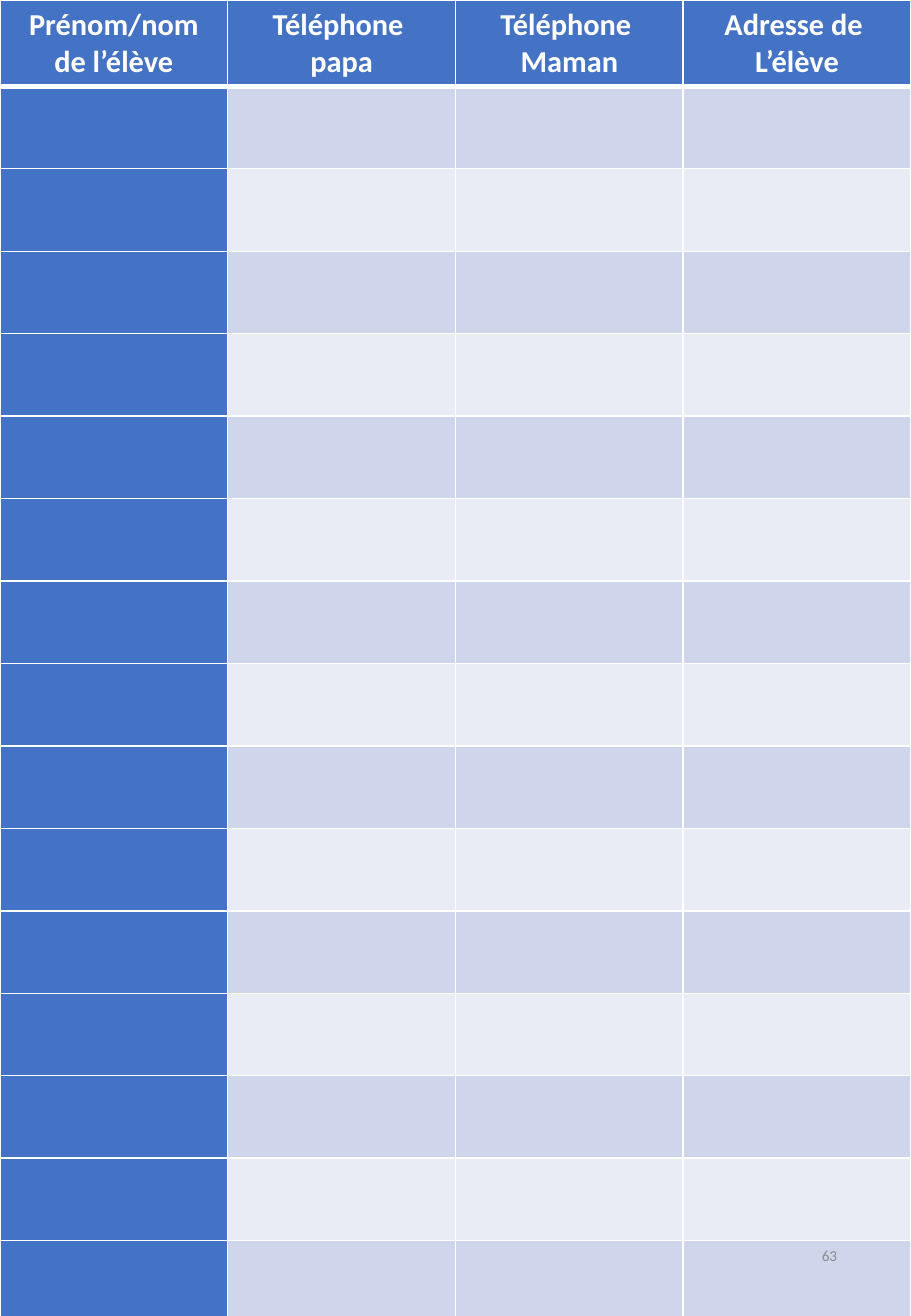
import lxml.etree
import pptx
import pptx.dml.color
import pptx.enum.text
import pptx.oxml.ns
import pptx.util

Pt = pptx.util.Pt
RGBColor = pptx.dml.color.RGBColor
ALIGN = pptx.enum.text.PP_ALIGN

WHITE = RGBColor(0xFF, 0xFF, 0xFF)
BLUE = RGBColor(0x44, 0x72, 0xC4)
BAND_DARK = RGBColor(0xCF, 0xD5, 0xEA)
BAND_LIGHT = RGBColor(0xE9, 0xEB, 0xF5)
GREY = RGBColor(0x8C, 0x8C, 0x8C)

PAGE_WIDTH, PAGE_HEIGHT = Pt(540), Pt(780)
ROW_HEIGHT = Pt(48.87)
ROW_COUNT = 16
HEADINGS = [
    "Prénom/nom de l’élève",
    "Téléphone \npapa",
    "Téléphone \nMaman",
    "Adresse de \nL’élève",
]


def format_text(frame, size, color, align, bold=False):
    """Apply one font and alignment to every paragraph of a text frame."""
    for para in frame.paragraphs:
        para.alignment = align
        for span in para.runs:
            span.font.name = "Calibri"
            span.font.size = Pt(size)
            span.font.bold = bold
            span.font.color.rgb = color


def add_borders(cell, top, bottom):
    """Draw white borders around a cell, with the given top and bottom widths."""
    qn = pptx.oxml.ns.qn
    properties = cell._tc.get_or_add_tcPr()
    for side, width in (("L", 1), ("R", 1), ("T", top), ("B", bottom)):
        line = lxml.etree.SubElement(properties, qn(f"a:ln{side}"), w=str(Pt(width)))
        fill = lxml.etree.SubElement(line, qn("a:solidFill"))
        lxml.etree.SubElement(fill, qn("a:srgbClr"), val=str(WHITE))


def fill_color(row, column):
    """Return the fill of a cell: blue headings, then alternating bands."""
    if row == 0 or column == 0:
        return BLUE
    return BAND_DARK if row % 2 else BAND_LIGHT


def add_contact_table(page):
    """Add the table of pupils and their contact details."""
    table = page.shapes.add_table(
        ROW_COUNT, len(HEADINGS), 0, 0, PAGE_WIDTH, ROW_HEIGHT * ROW_COUNT
    ).table
    table.first_col = True
    for row_index, row in enumerate(table.rows):
        row.height = ROW_HEIGHT
        for column_index, cell in enumerate(row.cells):
            add_borders(
                cell,
                top=3 if row_index == 1 else 1,
                bottom=3 if row_index == 0 else 1,
            )
            cell.fill.solid()
            cell.fill.fore_color.rgb = fill_color(row_index, column_index)
    for cell, heading in zip(table.rows[0].cells, HEADINGS):
        cell.text_frame.text = heading
        format_text(cell.text_frame, 18, WHITE, ALIGN.CENTER, bold=True)


def add_page_number(page, number):
    """Add the page number at the lower right."""
    box = page.shapes.add_textbox(Pt(381.6), Pt(722.9), Pt(121.7), Pt(41.8))
    frame = box.text_frame
    frame.word_wrap = True
    frame.vertical_anchor = pptx.enum.text.MSO_ANCHOR.MIDDLE
    frame.text = number
    format_text(frame, 9, GREY, ALIGN.RIGHT)


def main():
    """Build the contact sheet and save it."""
    deck = pptx.Presentation()
    deck.slide_width, deck.slide_height = PAGE_WIDTH, PAGE_HEIGHT
    page = deck.slides.add_slide(deck.slide_layouts[6])
    add_contact_table(page)
    add_page_number(page, "63")
    deck.save("out.pptx")


if __name__ == "__main__":
    main()
